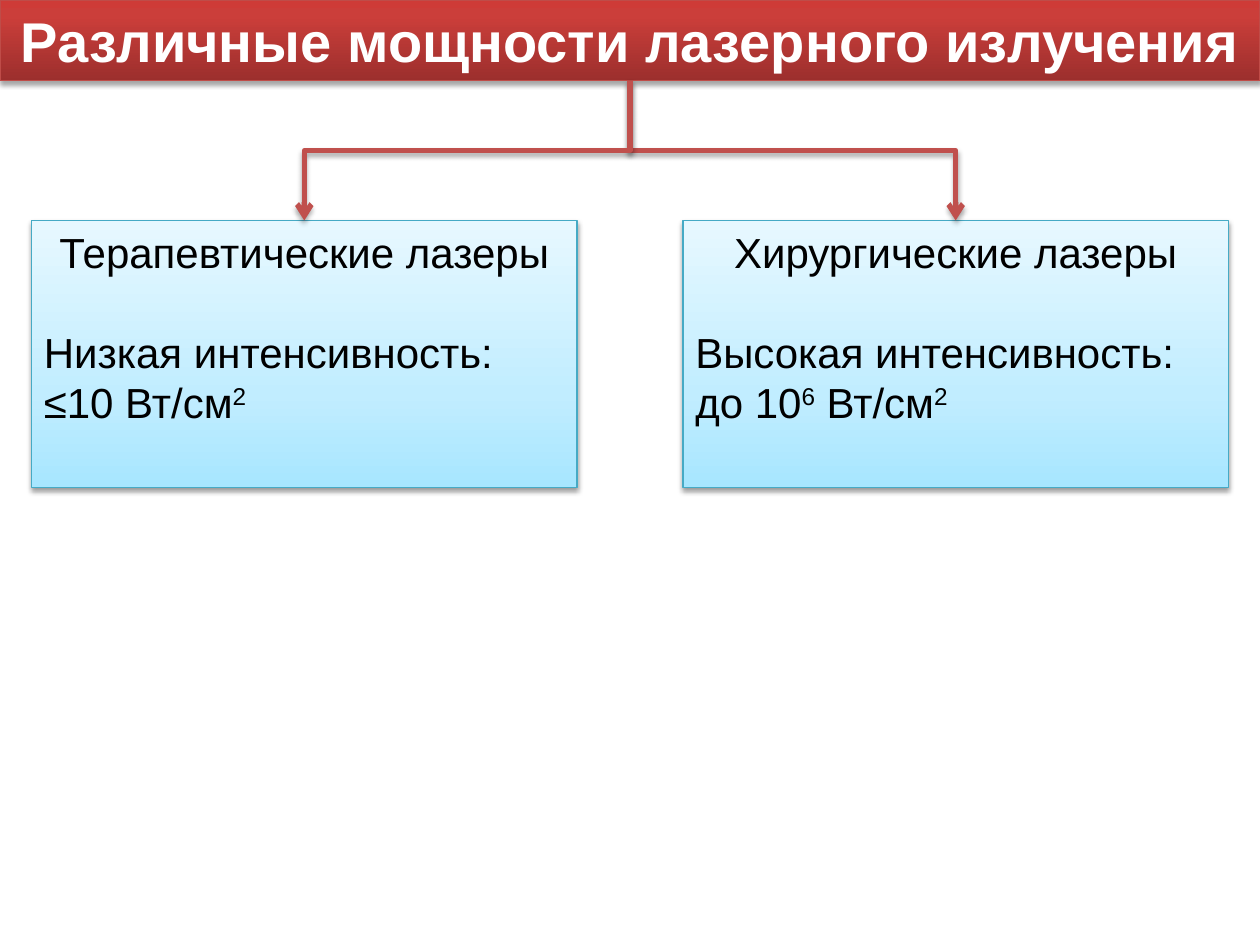
import pptx
import pptx.dml.color
import pptx.enum.shapes
import pptx.enum.text
import pptx.oxml
import pptx.oxml.ns
import pptx.util
from pptx.util import Inches

ALIGN = pptx.enum.text.PP_ALIGN
HEADER_HEIGHT, BOX_TOP = 0.64, 1.75
BOX_WIDTH, BOX_HEIGHT, MARGIN = 4.33, 2.12, 0.25
HEADER_STYLE = {
    "stops": [(0, "9C2F2D"), (80, "CB3E3A"), (100, "CE3B37")],
    "line": "BF4C48", "alpha": 35, "distance": 1.8,
}
BOX_STYLE = {
    "stops": [(0, "A7E6FF"), (35, "C1EDFF"), (100, "E7F8FF")],
    "line": "46AAC5", "alpha": 38, "distance": 1.6,
}
HEADER_FONT = {"name": "Arial", "size": pptx.util.Pt(32), "bold": True}
BOX_FONT = {"name": "Arial", "size": pptx.util.Pt(24), "bold": False}
LASERS = [
    ("Терапевтические лазеры", "Низкая интенсивность:", ["≤10 Вт/см", "2"]),
    ("Хирургические лазеры", "Высокая интенсивность:", ["до 10", "6", " Вт/см", "2"]),
]


def color(hex_value):
    return pptx.dml.color.RGBColor.from_string(hex_value)


def parse_drawing(markup):
    namespace = pptx.oxml.ns.nsdecls("a")
    return pptx.oxml.parse_xml(markup.replace(">", f" {namespace}>", 1))


def add_shadow(properties, alpha, distance):
    effects = properties.find(pptx.oxml.ns.qn("a:effectLst"))
    if effects is None:
        effects = parse_drawing("<a:effectLst></a:effectLst>")
        properties.append(effects)
    effects.append(parse_drawing(
        f'<a:outerShdw blurRad="{pptx.util.Pt(3.1)}" dist="{pptx.util.Pt(distance)}" '
        'dir="5400000" rotWithShape="0"><a:srgbClr val="000000">'
        f'<a:alpha val="{alpha * 1000}"/></a:srgbClr></a:outerShdw>'))


def add_panel(slide, left, top, width, height, style):
    panel = slide.shapes.add_shape(
        pptx.enum.shapes.MSO_SHAPE.RECTANGLE,
        Inches(left), Inches(top), Inches(width), Inches(height))
    panel.fill.gradient()
    panel.fill.gradient_angle = 90
    properties = panel._element.spPr
    stop_list = properties.find(".//" + pptx.oxml.ns.qn("a:gsLst"))
    stops = "".join(
        f'<a:gs pos="{position * 1000}"><a:srgbClr val="{shade}"/></a:gs>'
        for position, shade in style["stops"])
    stop_list.getparent().replace(
        stop_list, parse_drawing(f"<a:gsLst>{stops}</a:gsLst>"))
    panel.line.color.rgb = color(style["line"])
    panel.line.width = pptx.util.Pt(0.75)
    panel.shadow.inherit = False
    add_shadow(properties, style["alpha"], style["distance"])
    panel.text_frame.word_wrap = True
    panel.text_frame.vertical_anchor = pptx.enum.text.MSO_ANCHOR.TOP
    return panel


def write_paragraph(paragraph, pieces, font_values, hex_value, alignment):
    paragraph.alignment = alignment
    for index, piece in enumerate(pieces):
        run = paragraph.add_run()
        run.text = piece
        for attribute, value in font_values.items():
            setattr(run.font, attribute, value)
        run.font.color.rgb = color(hex_value)
        if index % 2:
            run.font._element.set("baseline", "30000")


def add_laser_box(slide, left, title, intensity, value):
    box = add_panel(slide, left, BOX_TOP, BOX_WIDTH, BOX_HEIGHT, BOX_STYLE)
    frame = box.text_frame
    write_paragraph(frame.paragraphs[0], [title], BOX_FONT, "000000", ALIGN.CENTER)
    for pieces, gap in (([intensity], 28), (value, 0)):
        paragraph = frame.add_paragraph()
        paragraph.space_before = pptx.util.Pt(gap)
        write_paragraph(paragraph, pieces, BOX_FONT, "000000", ALIGN.LEFT)
    return box


def add_branch(slide, header, box):
    branch = slide.shapes.add_connector(
        pptx.enum.shapes.MSO_CONNECTOR.ELBOW, 0, 0, Inches(1), Inches(1))
    branch.begin_connect(header, 2)
    branch.end_connect(box, 0)
    start_x, start_y = header.left + header.width // 2, header.top + header.height
    end_x, end_y = box.left + box.width // 2, box.top
    drop, reach = end_y - start_y, abs(end_x - start_x)
    to_right = end_x > start_x
    geometry = {
        "left": (start_x + end_x - drop) // 2,
        "top": (start_y + end_y - reach) // 2,
        "width": drop,
        "height": reach,
    }
    for attribute, value in geometry.items():
        setattr(branch, attribute, value)
    properties = branch._element.spPr
    transform = properties.find(pptx.oxml.ns.qn("a:xfrm"))
    orientation = {
        "rot": "16200000" if to_right else "5400000",
        "flipH": "1" if to_right else "0",
        "flipV": "0",
    }
    for attribute, value in orientation.items():
        transform.set(attribute, value)
    branch.line.color.rgb = color("C0504D")
    branch.line.width = pptx.util.Pt(3)
    outline = properties.find(pptx.oxml.ns.qn("a:ln"))
    outline.append(parse_drawing('<a:tailEnd type="arrow"></a:tailEnd>'))
    add_shadow(properties, 35, 1.8)


def main():
    presentation = pptx.Presentation()
    presentation.slide_width = Inches(10)
    presentation.slide_height = Inches(7.5)
    slide = presentation.slides.add_slide(presentation.slide_layouts[6])
    header = add_panel(slide, 0, 0, 10, HEADER_HEIGHT, HEADER_STYLE)
    write_paragraph(
        header.text_frame.paragraphs[0], ["Различные мощности лазерного излучения"],
        HEADER_FONT, "FFFFFF", ALIGN.CENTER)
    lefts = (MARGIN, 10 - MARGIN - BOX_WIDTH)
    boxes = [add_laser_box(slide, left, *laser) for left, laser in zip(lefts, LASERS)]
    for box in reversed(boxes):
        add_branch(slide, header, box)
    presentation.save("out.pptx")


if __name__ == "__main__":
    main()
